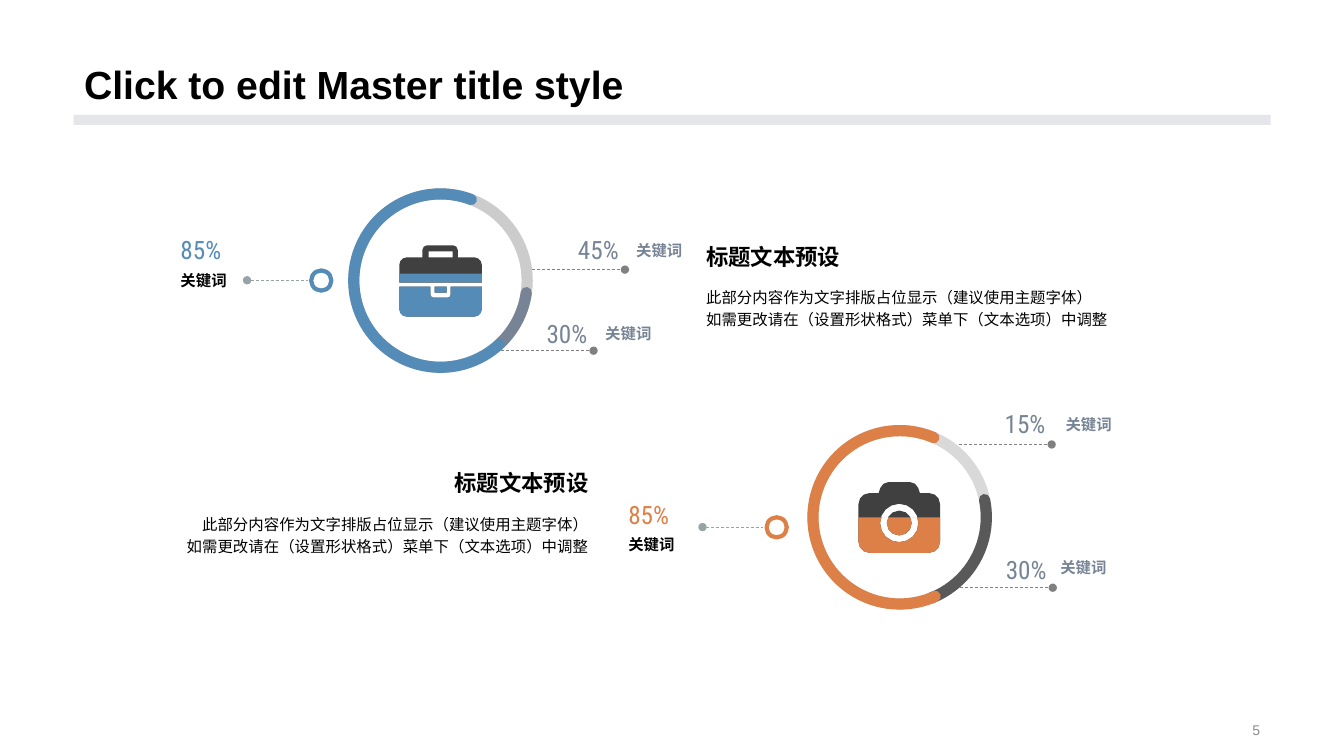
from math import hypot

from lxml.etree import SubElement
from pptx import Presentation
from pptx.dml.color import RGBColor
from pptx.enum.dml import MSO_LINE
from pptx.enum.shapes import MSO_CONNECTOR, MSO_SHAPE
from pptx.enum.text import MSO_ANCHOR, PP_ALIGN
from pptx.oxml.ns import qn
from pptx.util import Pt

BLACK = RGBColor(0x00, 0x00, 0x00)
WHITE = RGBColor(0xFF, 0xFF, 0xFF)
BLUE = RGBColor(0x54, 0x8B, 0xB7)
ORANGE = RGBColor(0xDD, 0x80, 0x47)
SLATE = RGBColor(0x77, 0x84, 0x95)
CHARCOAL = RGBColor(0x40, 0x40, 0x40)
DARK_GREY = RGBColor(0x59, 0x59, 0x59)
LEADER_GREY = RGBColor(0x80, 0x80, 0x80)
LEADER_TEAL = RGBColor(0x95, 0xA5, 0xA6)
TRACK_GREY = RGBColor(0xCC, 0xCC, 0xCC)
TRACK_LIGHT = RGBColor(0xD9, 0xD9, 0xD9)
RULE_GREY = RGBColor(0xE4, 0xE6, 0xEA)
PAGE_GREY = RGBColor(0x8C, 0x8C, 0x8C)

RING = 123.84
KEYWORD = "关键词"
HEADING = "标题文本预设"
BODY = ("此部分内容作为文字排版占位显示（建议使用主题字体）\v"
        "如需更改请在（设置形状格式）菜单下（文本选项）中调整")


def rect(left, top, right, bottom, radius=0):
    return [(left, top, radius), (right, top, radius),
            (right, bottom, radius), (left, bottom, radius)]


def disc(x, y, radius):
    return rect(x - radius, y - radius, x + radius, y + radius, radius)


# Outlines as (x, y, corner radius), from the icon's top left.
BRIEFCASE = [
    [(0, 8.6, 5.5), (16.5, 8.6, 0), (16.5, 0, 3.4), (41.8, 0, 3.4),
     (41.8, 8.6, 0), (59, 8.6, 5.5), (59, 26.6, 0), (0, 26.6, 0)],
    rect(20.9, 4.3, 38.2, 8.6),
    [(0, 29.5, 0), (22.3, 29.5, 0), (22.3, 37.4, 2), (36.7, 37.4, 2),
     (36.7, 29.5, 0), (59, 29.5, 0), (59, 51, 5.5), (0, 51, 5.5)],
    rect(25.2, 29.5, 33.8, 33.8),
]
CAMERA = [
    [(0, 7.9, 7.9), (14.4, 7.9, 0), (17, 0, 4.5), (41.3, 0, 4.5),
     (43.9, 7.9, 0), (58.3, 7.9, 7.9), (58.3, 50.6, 7.9), (0, 50.6, 7.9)],
    disc(29.15, 29.3, 13.7),
    disc(29.15, 29.3, 8.9),
]


def add_text(slide, box, text, size, color=BLACK, bold=False, font="Arial",
             align=PP_ALIGN.LEFT, anchor=MSO_ANCHOR.TOP, spacing=None):
    frame = slide.shapes.add_textbox(*map(Pt, box)).text_frame
    frame.word_wrap = True
    frame.margin_left = frame.margin_right = 0
    frame.margin_top = frame.margin_bottom = 0
    frame.vertical_anchor = anchor
    line = frame.paragraphs[0]
    line.text = text
    line.alignment = align
    line.line_spacing = spacing
    line.font.size, line.font.name = Pt(size), font
    line.font.bold, line.font.color.rgb = bold, color


def add_figure(slide, kind, box, fill=None, stroke=None, width=0):
    figure = slide.shapes.add_shape(kind, *map(Pt, box))
    figure.shadow.inherit = False
    if fill is None:
        figure.fill.background()
    else:
        figure.fill.solid()
        figure.fill.fore_color.rgb = fill
    if stroke is None:
        figure.line.fill.background()
    else:
        figure.line.color.rgb = stroke
        figure.line.width = Pt(width)
    return figure


def leader(slide, left, y, length, color, dot_end):
    """Dashed line with an oval at headEnd (left) or tailEnd (right)."""
    dashes = slide.shapes.add_connector(
        MSO_CONNECTOR.STRAIGHT, Pt(left), Pt(y), Pt(left + length), Pt(y))
    dashes.line.color.rgb = color
    dashes.line.width = Pt(0.5)
    dashes.line.dash_style = MSO_LINE.DASH
    properties = dashes._element.spPr
    SubElement(properties.get_or_add_ln(), qn(f"a:{dot_end}"), type="oval")
    SubElement(properties, qn("a:effectLst"))


def round_corners(outline):
    """Turn (x, y, radius) corners into points, more of them on larger curves."""
    points = []
    for i, (x, y, radius) in enumerate(outline):
        if not radius:
            points.append((x, y))
            continue
        ends = []
        for near_x, near_y, _ in (outline[i - 1], outline[(i + 1) % len(outline)]):
            share = radius / hypot(near_x - x, near_y - y)
            ends.append(((near_x - x) * share, (near_y - y) * share))
        (ax, ay), (bx, by) = ends
        steps = 2 + int(radius // 5)
        for step in range(steps + 1):
            t = step / steps
            u = 1 - t
            a = u ** 3 + 3 * u * u * t * 0.45
            b = t ** 3 + 3 * t * t * u * 0.45
            point = (round(x + a * ax + b * bx, 2), round(y + a * ay + b * by, 2))
            if point not in points:
                points.append(point)
    return points


def cut_below(points, cut):
    """Flatten what lies above the height cut, without needless points."""
    flat = [(x, max(y, cut)) for x, y in points]
    return [(x, y) for i, (x, y) in enumerate(flat)
            if not flat[i - 1][1] == y == flat[(i + 1) % len(flat)][1]]


def icon_layer(slide, left, top, outlines, color, cut=0):
    """Draw the part of an icon that lies below the height cut."""
    contours = [[(Pt(left + x), Pt(top + y)) for x, y in cut_below(round_corners(o), cut)]
                for o in outlines if max(y for _, y, _ in o) > cut]
    builder = slide.shapes.build_freeform(*contours[0][0], scale=1.0)
    for i, contour in enumerate(contours):
        if i:
            builder.move_to(*contour[0])
        builder.add_line_segments(contour[1:], close=True)
    layer = builder.convert_to_shape()
    layer.shadow.inherit = False
    layer.fill.solid()
    layer.fill.fore_color.rgb = color
    layer.line.fill.background()


def gauge(slide, left, top, accent, track, arcs, icon, cut):
    """Ring with arcs of (start, end, colour) in degrees, and an icon inside."""
    icon_layer(slide, left + 32.5, top + 36.7, icon, CHARCOAL)
    icon_layer(slide, left + 32.5, top + 36.7, icon, accent, cut)
    box = (left, top, RING, RING)
    add_figure(slide, MSO_SHAPE.OVAL, box, stroke=track, width=8)
    for start, end, color in arcs:
        arc = add_figure(slide, MSO_SHAPE.ARC, box, stroke=color, width=8)
        arc.adjustments[0], arc.adjustments[1] = start * 0.6, end * 0.6
        arc._element.spPr.get_or_add_ln().set("cap", "rnd")


def percentage(slide, left, top, value, color):
    add_text(slide, (left, top, 46, 26), value, 18, color, font="Roboto Condensed")


def keyword(slide, left, top, color):
    add_text(slide, (left, top, 48, 21), KEYWORD, 11, color, bold=True)


def side_callout(slide, left, y, value, value_rise, word_shift, word_rise):
    leader(slide, left, y, 66.2, LEADER_GREY, "tailEnd")
    percentage(slide, left + 32.6, y - value_rise, value, SLATE)
    keyword(slide, left + word_shift, y - word_rise, SLATE)


def main_callout(slide, left, top, knob_left, knob_top, accent):
    percentage(slide, left, top, "85%", accent)
    keyword(slide, left, top + 25.9, BLACK)
    leader(slide, knob_left - 45.8, knob_top + 7, 43.2, LEADER_TEAL, "headEnd")
    add_figure(slide, MSO_SHAPE.OVAL, (knob_left, knob_top, 14.4, 14.4),
               WHITE, accent, 3)


def description(slide, left, top, width, body_drop, align):
    add_text(slide, (left, top, width, 29), HEADING, 16, bold=True, align=align)
    add_text(slide, (left, top + body_drop, width, 40), BODY, 11,
             align=align, spacing=1.2)


def page_frame(slide):
    add_figure(slide, MSO_SHAPE.RECTANGLE, (52.6, 82.1, 855, 7.2), RULE_GREY)
    add_text(slide, (60, 0, 840, 77), "Click to edit Master title style", 28,
             bold=True, anchor=MSO_ANCHOR.BOTTOM, spacing=0.9)
    add_text(slide, (678.2, 513.1, 221.8, 16.6), "5", 10, PAGE_GREY,
             align=PP_ALIGN.RIGHT, anchor=MSO_ANCHOR.MIDDLE)


def main():
    deck = Presentation()
    deck.slide_width, deck.slide_height = Pt(960), Pt(540)
    slide = deck.slides.add_slide(deck.slide_layouts[6])
    page_frame(slide)

    gauge(slide, 252.7, 138.5, BLUE, TRACK_GREY,
          [(7.95, 48.09, SLATE), (47.42, 290.88, BLUE)], BRIEFCASE, 20.2)
    main_callout(slide, 128.9, 167.4, 222.3, 193.2, BLUE)
    side_callout(slide, 380.2, 192.6, "45%", 25.5, 74.2, 20.5)
    side_callout(slide, 357.8, 250.5, "30%", 23, 74.5, 18.7)
    description(slide, 504.4, 173.8, 300, 29.4, PP_ALIGN.LEFT)

    gauge(slide, 580.7, 307.6, ORANGE, TRACK_LIGHT,
          [(348.2, 69.17, DARK_GREY), (65.83, 293.34, ORANGE)], CAMERA, 25.2)
    main_callout(slide, 448.8, 356.4, 547.6, 369.5, ORANGE)
    side_callout(slide, 685, 317.5, "15%", 25.9, 76.1, 20.9)
    side_callout(slide, 685.8, 419.8, "30%", 23.7, 71.6, 20.9)
    description(slide, 118.4, 335.2, 302, 30.2, PP_ALIGN.RIGHT)

    deck.save("out.pptx")


if __name__ == "__main__":
    main()
